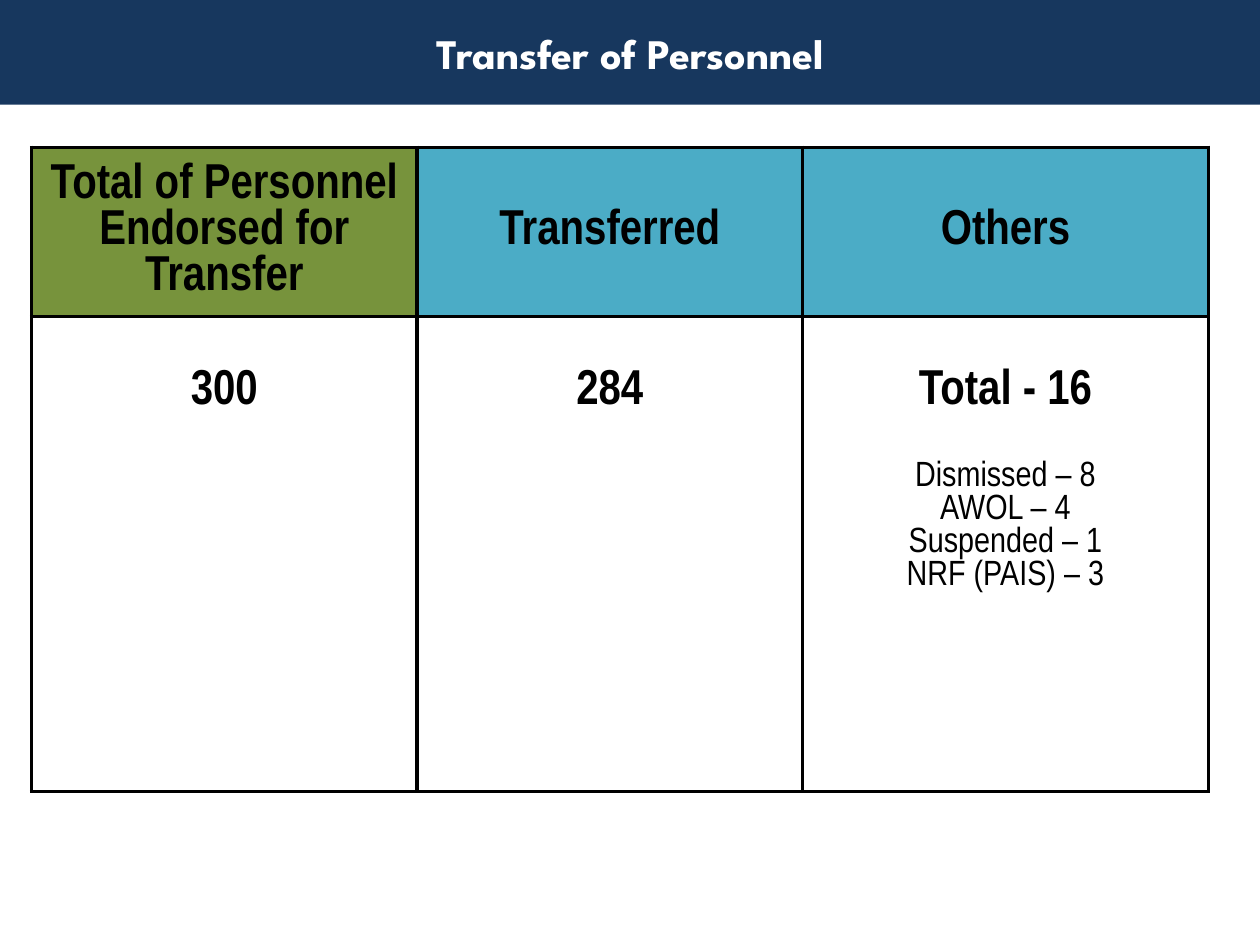
import pptx
import pptx.util
import pptx.dml.color
import pptx.enum.text
from dataclasses import dataclass
from lxml import etree
from pptx.oxml.ns import qn
from pptx.util import Inches, Pt


@dataclass(frozen=True)
class Theme:
    navy: str = "17375E"
    green: str = "77933C"
    teal: str = "4BACC6"
    white: str = "FFFFFF"
    black: str = "000000"
    head: str = "League Spartan"
    body: str = "Arial Narrow"
    title: int = 24
    large: int = 28
    small: int = 20
    gap: int = 26
    rule: float = 2.25


THEME = Theme()
MIDDLE = pptx.enum.text.MSO_ANCHOR.MIDDLE
TOP = pptx.enum.text.MSO_ANCHOR.TOP

# Each cell holds its main line, then any detail lines
HEADS = [
    ("Total of Personnel Endorsed for Transfer", THEME.green),
    ("Transferred", THEME.teal),
    ("Others", THEME.teal),
]
COUNTS = [
    ("300", []),
    ("284", []),
    ("Total - 16",
     ["Dismissed – 8", "AWOL – 4", "Suspended – 1", "NRF (PAIS) – 3"]),
]


def paint(item, color):
    item.fill.solid()
    item.fill.fore_color.rgb = pptx.dml.color.RGBColor.from_string(color)


def write(para, text, size=THEME.large, face=THEME.body,
          color=THEME.black, bold=True, before=0):
    para.text = text
    para.alignment = pptx.enum.text.PP_ALIGN.CENTER
    if before:
        para.space_before = Pt(before)
    font = para.runs[0].font
    font.name, font.size, font.bold = face, Pt(size), bold
    font.color.rgb = pptx.dml.color.RGBColor.from_string(color)


def border(cell):
    props = cell._tc.get_or_add_tcPr()
    for spot, side in enumerate(("lnL", "lnR", "lnT", "lnB")):
        line = etree.Element(qn("a:" + side), w=str(int(Pt(THEME.rule))))
        fill = etree.SubElement(line, qn("a:solidFill"))
        etree.SubElement(fill, qn("a:srgbClr"), val=THEME.black)
        props.insert(spot, line)


def style(cell, color, anchor):
    paint(cell, color)
    border(cell)
    cell.vertical_anchor = anchor


def banner(slide, text):
    title = slide.shapes.title
    title.left, title.top = Inches(0), Inches(0)
    title.width, title.height = Inches(10), Inches(0.83)
    paint(title, THEME.navy)
    title.text_frame.vertical_anchor = MIDDLE
    write(title.text_frame.paragraphs[0], text, size=THEME.title,
          face=THEME.head, color=THEME.white)


def grid(slide):
    widths, heights = (3.06, 3.06, 3.22), (1.34, 3.77)
    table = slide.shapes.add_table(
        len(heights), len(widths), Inches(0.25), Inches(1.17),
        Inches(sum(widths)), Inches(sum(heights))).table
    table.first_row = table.horz_banding = False
    for col, width in zip(table.columns, widths):
        col.width = Inches(width)
    for row, height in zip(table.rows, heights):
        row.height = Inches(height)

    # Header row
    for col, (text, color) in enumerate(HEADS):
        cell = table.cell(0, col)
        style(cell, color, MIDDLE)
        write(cell.text_frame.paragraphs[0], text)

    # Counts, set one line below the top of the row
    for col, (text, notes) in enumerate(COUNTS):
        cell = table.cell(1, col)
        style(cell, THEME.white, TOP)
        cell.margin_top = Inches(0.42)
        frame = cell.text_frame
        write(frame.paragraphs[0], text)
        for place, note in enumerate(notes):
            write(frame.add_paragraph(), note, size=THEME.small, bold=False,
                  before=0 if place else THEME.gap)


def main():
    deck = pptx.Presentation()
    deck.slide_width, deck.slide_height = Inches(10), Inches(7.5)
    slide = deck.slides.add_slide(deck.slide_layouts[5])
    banner(slide, "Transfer of Personnel")
    grid(slide)
    deck.save("out.pptx")


if __name__ == "__main__":
    main()
